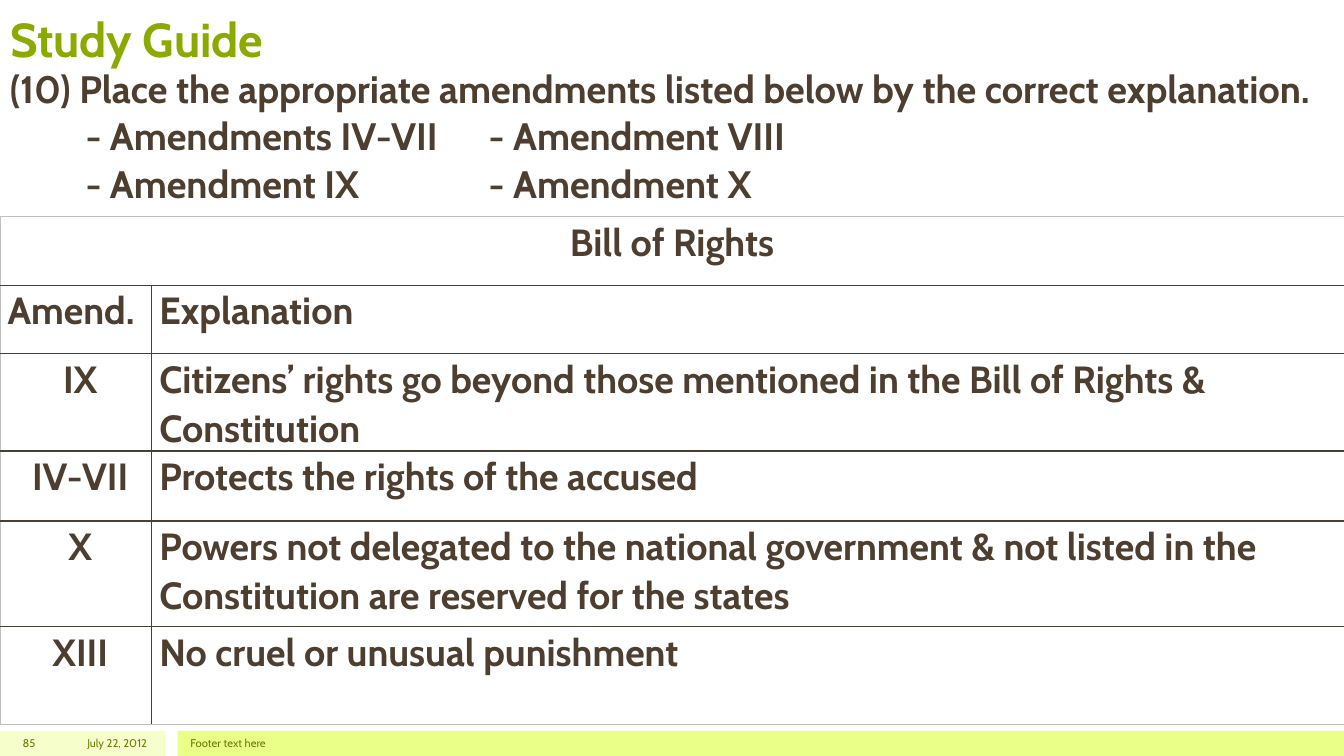
from dataclasses import dataclass

import pptx
import pptx.dml.color
import pptx.enum.shapes
import pptx.enum.text
import pptx.oxml
import pptx.oxml.ns
import pptx.util

Pt = pptx.util.Pt
RGB = pptx.dml.color.RGBColor
ALIGN = pptx.enum.text.PP_ALIGN
ANCHOR = pptx.enum.text.MSO_ANCHOR

GREEN = RGB(0x8B, 0xAA, 0x00)
DARK_GREEN = RGB(0x68, 0x80, 0x00)
BROWN = RGB(0x4D, 0x3E, 0x2F)
PALE_LIME = RGB(0xF6, 0xFF, 0xCC)
LIME = RGB(0xE9, 0xFF, 0x88)
WHITE = RGB(0xFF, 0xFF, 0xFF)
GREY = RGB(0xC0, 0xC0, 0xC0)

SLIDE_W, SLIDE_H = 960, 540
FOOTER_TOP, FOOTER_H = 522, 18
TABLE_TOP = 154.8
COL_WIDTHS = (108.5, 851.5)
THICK_RULES = (3, 4)  # rules above these rows are heavier


@dataclass
class Band:
    left: float
    width: float
    color: RGB


@dataclass
class TextItem:
    left: float
    top: float
    width: float
    height: float
    lines: tuple
    size: float
    color: RGB
    bold: bool = False
    align: ALIGN = ALIGN.LEFT
    anchor: ANCHOR = ANCHOR.MIDDLE
    line_spacing: float = 1.0
    space_before: float = 0


@dataclass
class Row:
    height: float
    amendment: str
    explanation: str = ""
    align: ALIGN = ALIGN.CENTER


BANDS = (Band(0, 118.2, PALE_LIME), Band(126.8, 833.2, LIME))

QUESTION = TextItem(
    0, 51.8, SLIDE_W, 123,
    ("(10) Place the appropriate amendments listed below by the correct explanation.",
     "\t- Amendments IV-VII\t\t- Amendment VIII",
     "\t- Amendment IX\t\t\t- Amendment X"),
    27.3, BROWN, True, anchor=ANCHOR.TOP, line_spacing=0.7, space_before=11)

FOOTERS = tuple(
    TextItem(left, FOOTER_TOP, width, FOOTER_H, (text,), 8, DARK_GREEN, align=align)
    for left, width, text, align in (
        (0, 32.4, "85", ALIGN.RIGHT),
        (33.8, 78.5, "July 22, 2012", ALIGN.RIGHT),
        (128.9, 720, "Footer text here", ALIGN.LEFT)))

ROWS = (
    Row(49, "Bill of Rights"),
    Row(49, "Amend.", "Explanation", ALIGN.LEFT),
    Row(60.5, " IX", "Citizens’ rights go beyond those mentioned in the Bill of Rights & Constitution"),
    Row(49.7, " IV-VII", "Protects the rights of the accused"),
    Row(75.6, " X", "Powers not delegated to the national government & not listed in the "
        "Constitution are reserved for the states"),
    Row(69.8, " XIII", "No cruel or unusual punishment"),
)


def set_format(target: object, **values: object) -> None:
    for name, value in values.items():
        setattr(target, name, value)


def write_line(p, text: str, size: float, color: RGB, bold: bool, **paragraph: object) -> None:
    set_format(p, **paragraph)
    r = p.add_run()
    r.text = text
    set_format(r.font, name="Cabin", size=Pt(size), bold=bold)
    r.font.color.rgb = color


def add_band(s, band: Band) -> None:
    sp = s.shapes.add_shape(pptx.enum.shapes.MSO_SHAPE.RECTANGLE, Pt(band.left),
                            Pt(FOOTER_TOP), Pt(band.width), Pt(FOOTER_H))
    sp.shadow.inherit = False
    sp.fill.solid()
    sp.fill.fore_color.rgb = band.color
    sp.line.fill.background()


def add_text(s, item: TextItem) -> None:
    tf = s.shapes.add_textbox(Pt(item.left), Pt(item.top),
                              Pt(item.width), Pt(item.height)).text_frame
    set_format(tf, word_wrap=True, vertical_anchor=item.anchor)
    for i, text in enumerate(item.lines):
        p = tf.add_paragraph() if i else tf.paragraphs[0]
        write_line(p, text, item.size, item.color, item.bold, alignment=item.align,
                   line_spacing=item.line_spacing, space_before=Pt(item.space_before))
        if text.startswith("\t"):
            p._p.get_or_add_pPr().set("marL", str(Pt(18)))


def add_border(cell, side: str, color: RGB, width: float) -> None:
    ns = pptx.oxml.ns.nsdecls("a")
    cell._tc.get_or_add_tcPr().append(pptx.oxml.parse_xml(
        f'<a:ln{side} {ns} w="{Pt(width)}"><a:solidFill><a:srgbClr val="{color}"/>'
        f'</a:solidFill></a:ln{side}>'))


def rule_style(index: int, count: int) -> tuple:
    """Colour and width of a horizontal rule, numbered from the top edge."""
    if index in (0, count):
        return GREY, 0.75
    return BROWN, 1.5 if index in THICK_RULES else 1


def add_rights_table(s) -> None:
    n = len(ROWS)
    table = s.shapes.add_table(n, 2, 0, Pt(TABLE_TOP), Pt(SLIDE_W),
                               Pt(sum(row.height for row in ROWS))).table
    set_format(table, first_row=False, horz_banding=False)
    for column, width in zip(table.columns, COL_WIDTHS):
        column.width = Pt(width)
    table.cell(0, 0).merge(table.cell(0, 1))
    for i, row in enumerate(ROWS):
        table.rows[i].height = Pt(row.height)
        cells = ((row.amendment, row.align), (row.explanation, ALIGN.LEFT))
        for j, (text, align) in enumerate(cells):
            cell = table.cell(i, j)
            set_format(cell, margin_left=Pt(5.4), margin_right=Pt(5.4),
                       margin_top=0, margin_bottom=0)
            inner = (BROWN, 1) if i else (WHITE, 0)
            add_border(cell, "L", *(inner if j else (GREY, 0.75)))
            add_border(cell, "R", *((GREY, 0.75) if j or not i else inner))
            add_border(cell, "T", *rule_style(i, n))
            add_border(cell, "B", *rule_style(i + 1, n))
            cell.fill.solid()
            cell.fill.fore_color.rgb = WHITE
            if text:
                write_line(cell.text_frame.paragraphs[0], text, 27, BROWN, True,
                           alignment=align, line_spacing=1.07)


def main() -> None:
    prs = pptx.Presentation()
    set_format(prs, slide_width=Pt(SLIDE_W), slide_height=Pt(SLIDE_H))
    s = prs.slides.add_slide(prs.slide_layouts[5])
    for band in BANDS:
        add_band(s, band)
    title = s.shapes.title
    set_format(title, left=0, top=0, width=Pt(SLIDE_W), height=Pt(51.8))
    set_format(title.text_frame, vertical_anchor=ANCHOR.BOTTOM, word_wrap=True)
    write_line(title.text_frame.paragraphs[0], "Study Guide", 34, GREEN, True,
               alignment=ALIGN.LEFT)
    for item in (QUESTION, *FOOTERS):
        add_text(s, item)
    add_rights_table(s)
    prs.save("out.pptx")


if __name__ == "__main__":
    main()
